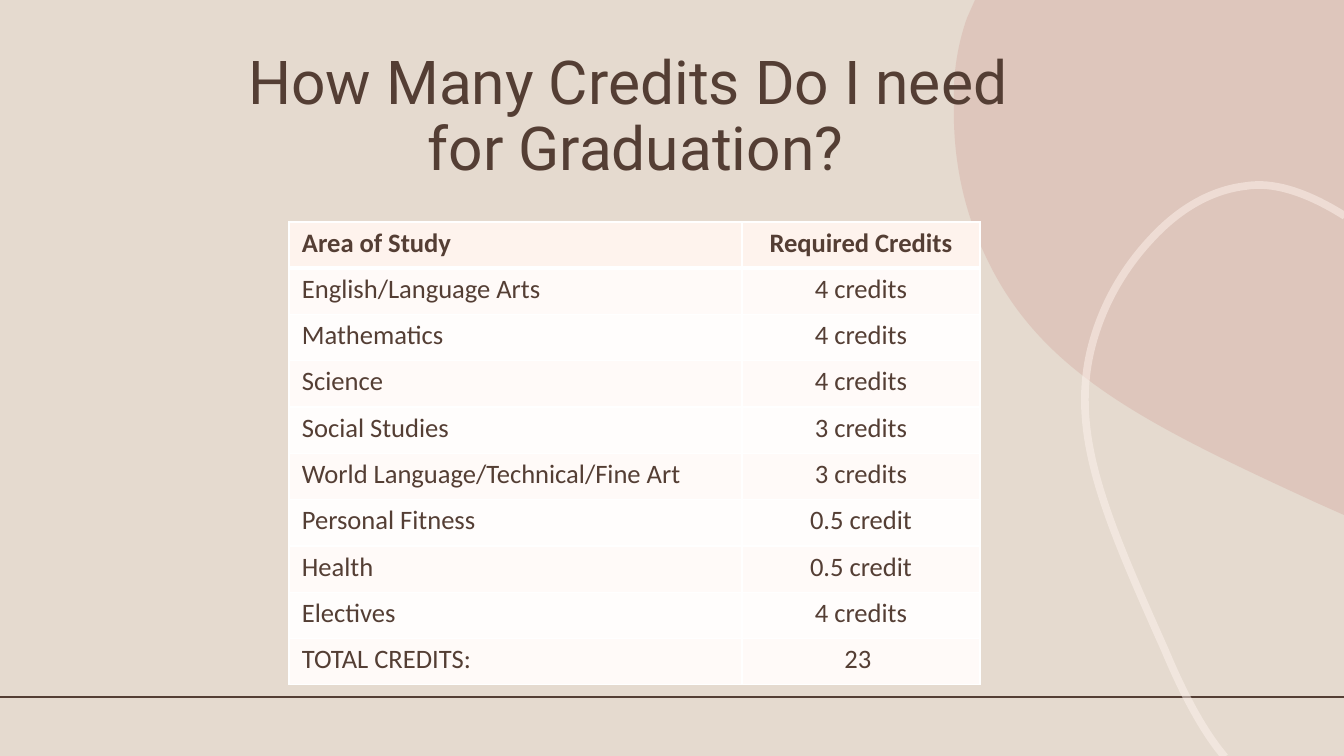
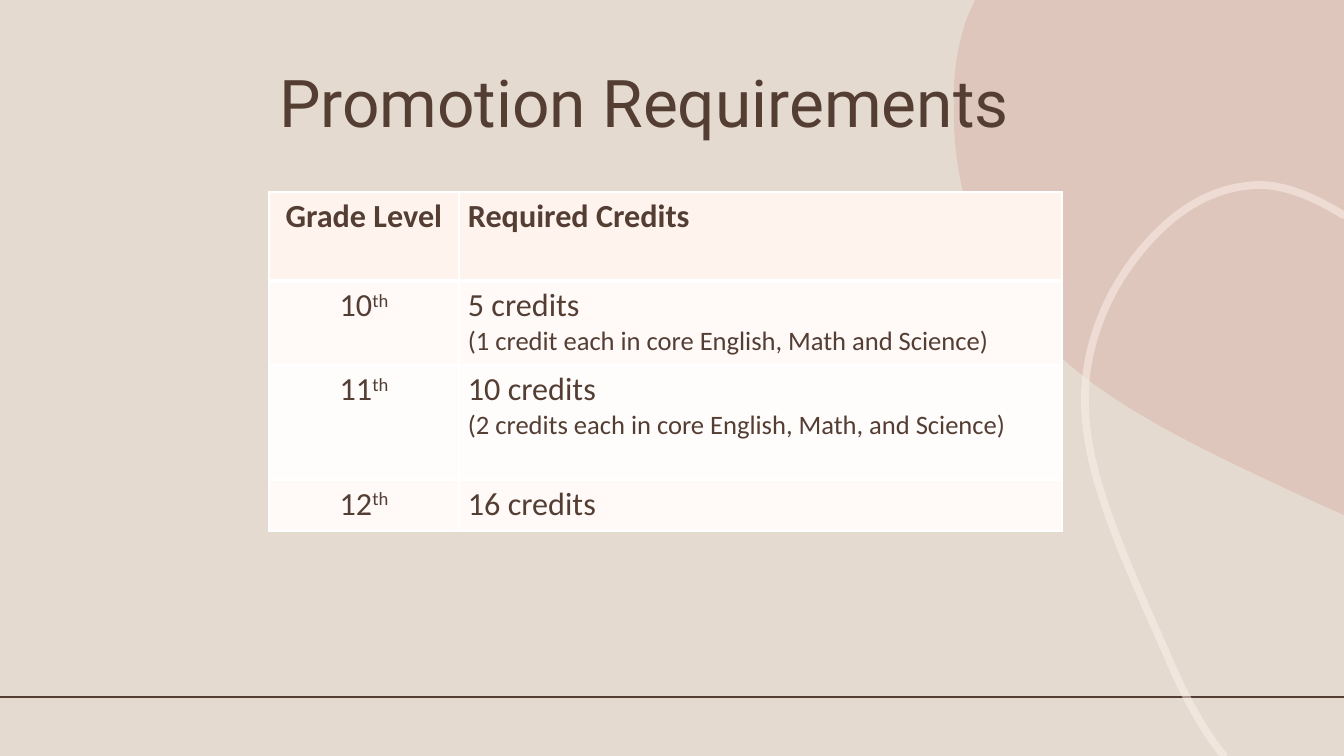
from dataclasses import dataclass
from typing import Optional

from lxml.etree import SubElement
from pptx import Presentation
from pptx.dml.color import RGBColor as RGB
from pptx.enum.shapes import MSO_CONNECTOR as CONN
from pptx.enum.text import MSO_ANCHOR as ANCHOR, MSO_AUTO_SIZE as AUTO, PP_ALIGN as AL
from pptx.oxml.ns import qn
from pptx.util import Emu, Pt

PX = 914400 / 100.8
WIDTH, HEIGHT = 1344, 756
TITLE_FONT, TABLE_FONT = "Roboto", "Calibri"
NOTE_SIZE = 19
COLORS = {
    "background": "E5DACF",
    "ink": "543E34",
    "blob": "CF9B92",
    "cream": "FEF3ED",
    "odd_row": "FFFAF8",
    "even_row": "FFFDFC",
    "border": "FFFFFF",
}


@dataclass
class Outline:
    """Each segment is one point (straight) or three points (Bezier curve)."""
    box: tuple[int, int, int, int]
    start: tuple[int, int]
    segments: list[list[tuple[int, int]]]
    color: str
    opacity: int
    line_width: float = 0


@dataclass
class Title:
    text: str
    box: tuple[int, int, int, int]
    size: float
    spacing: float
    align: AL
    anchor: ANCHOR


@dataclass
class Grid:
    """In a cell, ^ starts a superscript and lines after the first are notes."""
    left: int
    top: int
    height: int
    widths: list[int]
    aligns: list[AL]
    size: int
    margin: int
    rows: list[tuple[str, str]]
    heights: Optional[list[int]] = None


BLOB = Outline((954, 0, 390, 515), (975, 0), [
    [(1344, 0)], [(1344, 515)], [(1317, 503)],
    [(1145, 424), (1040, 372), (986, 257)],
    [(956, 195), (953, 136), (954, 102)],
    [(953, 80), (956, 49), (967, 18)],
], "blob", 30)
LOOP = Outline((1086, 185, 259, 572), (1225, 757), [
    [(1208, 737), (1188, 705), (1165, 650)],
    [(1103, 511), (1066, 427), (1095, 335)],
    [(1110, 287), (1136, 255), (1153, 237)],
    [(1170, 219), (1202, 191), (1246, 186)],
    [(1251, 185), (1257, 185), (1262, 185)],
    [(1289, 186), (1318, 199), (1345, 216)],
], "cream", 50, line_width=5.5)


def px(n: float) -> Emu:
    return Emu(round(n * PX))


def color(name: str) -> RGB:
    return RGB.from_string(COLORS[name])


def add_text(p, text: str, *, size: float, font: str, bold: bool = False,
             raised: bool = False) -> None:
    r = p.add_run()
    r.text = text
    r.font.size, r.font.name, r.font.bold = Pt(size), font, bold
    r.font.color.rgb = color("ink")
    if raised:
        r._r.get_or_add_rPr().set("baseline", "30000")


# Shared decoration
def bend(s, outline: Outline) -> None:
    """Join the straight steps of each curve into one Bezier, inside the given box."""
    left, top, width, height = outline.box
    s.left, s.top, s.width, s.height = map(px, outline.box)
    track = next(s.element.iter(qn("a:path")))
    track.set("w", str(px(width)))
    track.set("h", str(px(height)))
    points = [outline.start] + [point for seg in outline.segments for point in seg]
    for pt, (x, y) in zip(track.iter(qn("a:pt")), points):
        pt.set("x", str(px(x - left)))
        pt.set("y", str(px(y - top)))
    steps = iter(track.findall(qn("a:lnTo")))
    for seg in outline.segments:
        first, *rest = [next(steps) for _ in seg]
        if rest:
            first.tag = qn("a:cubicBezTo")
        for step in rest:
            first.append(step[0])
            track.remove(step)


def add_outline(shapes, outline: Outline):
    builder = shapes.build_freeform(*map(px, outline.start))
    points = [(px(x), px(y)) for seg in outline.segments for x, y in seg]
    builder.add_line_segments(points, close=not outline.line_width)
    s = builder.convert_to_shape()
    bend(s, outline)
    s.shadow.inherit = False
    if outline.line_width:
        s.fill.background()
        s.line.color.rgb = color(outline.color)
        s.line.width = Pt(outline.line_width)
    else:
        s.fill.solid()
        s.fill.fore_color.rgb = color(outline.color)
        s.line.fill.background()
    for clr in s.element.iter(qn("a:srgbClr")):
        SubElement(clr, qn("a:alpha")).set("val", str(outline.opacity * 1000))
    return s


def add_rule(shapes, y: int):
    line = shapes.add_connector(CONN.STRAIGHT, 0, px(y), px(WIDTH), px(y))
    line.line.color.rgb = color("ink")
    line.line.width = Pt(1.25)
    SubElement(line.element.spPr, qn("a:effectLst"))
    return line


def decorate(layout, shapes) -> None:
    """Draw the decoration with the shapes of a slide, then move it to the layout."""
    parts = [add_rule(shapes, 697), add_outline(shapes, BLOB), add_outline(shapes, LOOP)]
    for i, s in enumerate(parts):
        s.element.xpath("./*/p:cNvPr")[0].set("id", str(100 + i))
        layout.shapes.element.append(s.element)


# Title and table
def set_title(slide, title: Title) -> None:
    s = slide.shapes.title
    s.left, s.top, s.width, s.height = map(px, title.box)
    tf = s.text_frame
    tf.word_wrap, tf.auto_size, tf.vertical_anchor = True, AUTO.NONE, title.anchor
    p = tf.paragraphs[0]
    p.alignment, p.line_spacing = title.align, title.spacing
    for i, line in enumerate(title.text.split("\n")):
        if i:
            p.add_line_break()
        add_text(p, line, size=title.size, font=TITLE_FONT)


def set_borders(cell, row: int) -> None:
    tc_pr = cell._tc.get_or_add_tcPr()
    for side in "LRTB":
        thick = (row, side) in ((0, "B"), (1, "T"))
        ln = SubElement(tc_pr, qn(f"a:ln{side}"), w=str(Pt(3 if thick else 1)))
        fill = SubElement(ln, qn("a:solidFill"))
        SubElement(fill, qn("a:srgbClr"), val=COLORS["border"])


def fill_cell(cell, text: str, row: int, align: AL, grid: Grid) -> None:
    set_borders(cell, row)
    cell.fill.solid()
    cell.fill.fore_color.rgb = color(
        "cream" if row == 0 else "odd_row" if row % 2 else "even_row")
    cell.margin_left = cell.margin_right = px(grid.margin)
    cell.margin_top = cell.margin_bottom = px(5)
    tf = cell.text_frame
    for i, line in enumerate(text.split("\n")):
        p = tf.add_paragraph() if i else tf.paragraphs[0]
        p.alignment = align
        for k, part in enumerate(line.split("^")):
            add_text(p, part, size=NOTE_SIZE if i else grid.size, font=TABLE_FONT,
                     bold=row == 0, raised=k > 0)


def add_grid(slide, grid: Grid) -> None:
    table = slide.shapes.add_table(
        len(grid.rows), len(grid.widths), px(grid.left), px(grid.top),
        px(sum(grid.widths)), px(grid.height)).table
    for column, width in zip(table.columns, grid.widths):
        column.width = px(width)
    for row, height in zip(table.rows, grid.heights or []):
        row.height = px(height)
    for i, texts in enumerate(grid.rows):
        for j, text in enumerate(texts):
            fill_cell(table.cell(i, j), text, i, grid.aligns[j], grid)


# Content
SLIDES = [
    (
        Title("How Many Credits Do I need \nfor Graduation?", (185, 45, 901, 146),
              43.2, 0.9, AL.CENTER, ANCHOR.MIDDLE),
        Grid(289, 222, 463, [453, 238], [AL.LEFT, AL.CENTER], 19, 13, [
            ("Area of Study", "Required Credits"),
            ("English/Language Arts", "4 credits"),
            ("Mathematics", "4 credits"),
            ("Science", "4 credits"),
            ("Social Studies", "3 credits"),
            ("World Language/Technical/Fine Art", "3 credits"),
            ("Personal Fitness", "0.5 credit"),
            ("Health", "0.5 credit"),
            ("Electives", "4 credits"),
            ("TOTAL CREDITS:", "23 "),
        ]),
    ),
    (
        Title("Promotion Requirements", (269, 27, 840, 119),
              47, 0.85, AL.LEFT, ANCHOR.BOTTOM),
        Grid(269, 192, 339, [190, 603], [AL.CENTER, AL.LEFT], 23, 9, [
            ("Grade Level", "Required Credits"),
            ("10^th", "5 credits\n(1 credit each in core English, Math and Science)"),
            ("11^th", "10 credits\n(2 credits each in core English, Math, and Science)"),
            ("12^th", "16 credits"),
        ], heights=[89, 84, 115, 51]),
    ),
]


def main() -> None:
    prs = Presentation()
    prs.slide_width, prs.slide_height = px(WIDTH), px(HEIGHT)
    background = prs.slide_master.background.fill
    background.solid()
    background.fore_color.rgb = color("background")
    layout = prs.slide_layouts[5]
    for i, (title, grid) in enumerate(SLIDES):
        slide = prs.slides.add_slide(layout)
        if i == 0:
            decorate(layout, slide.shapes)
        set_title(slide, title)
        add_grid(slide, grid)
    prs.save("out.pptx")


if __name__ == "__main__":
    main()
